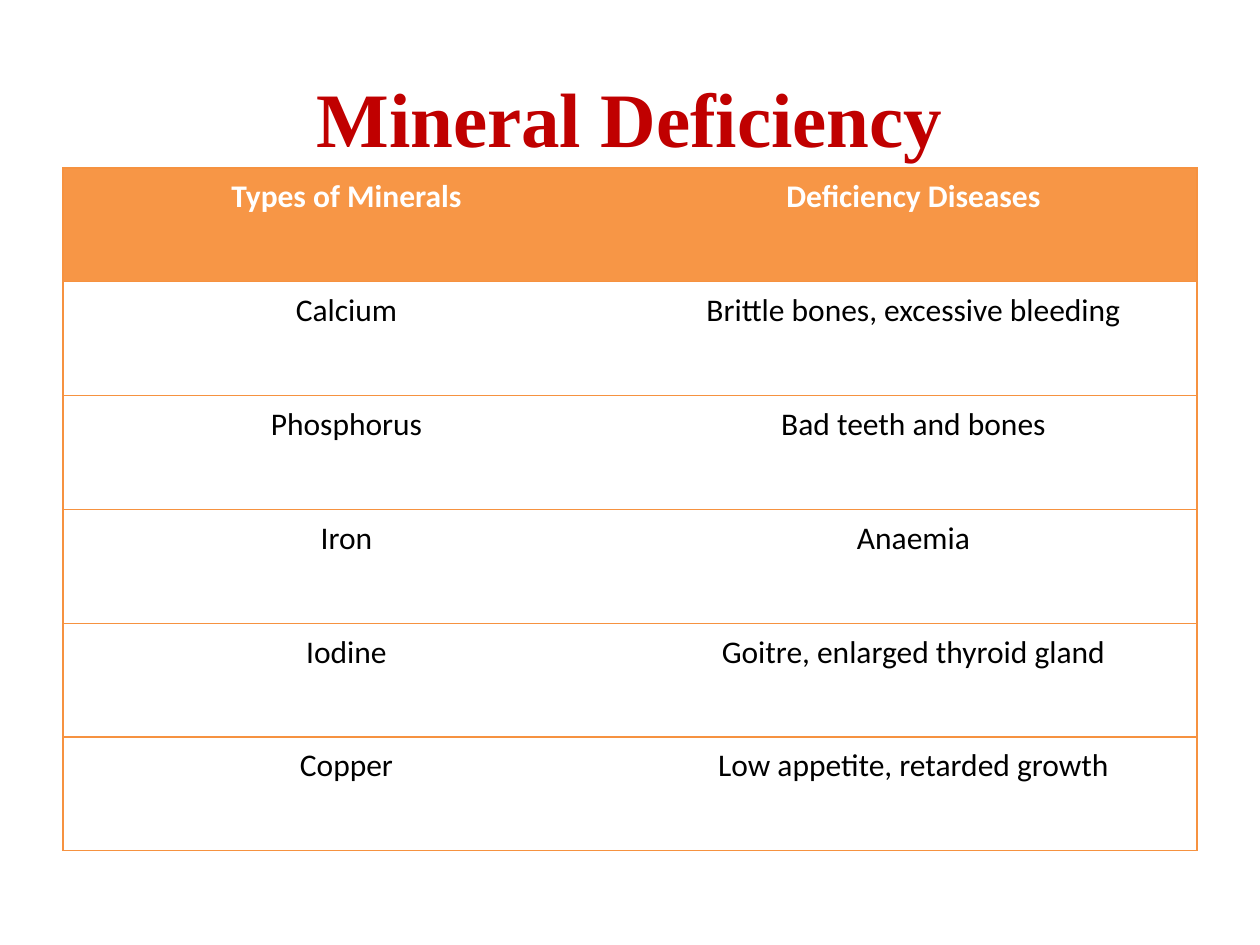
from dataclasses import dataclass

from lxml import etree
from pptx import Presentation
from pptx.dml.color import RGBColor
from pptx.enum.text import MSO_ANCHOR, PP_ALIGN
from pptx.oxml.ns import qn
from pptx.util import Emu, Pt

MIDDLE = MSO_ANCHOR.MIDDLE
CENTER = PP_ALIGN.CENTER
SCALE = 914400 / 126


@dataclass(frozen=True)
class Theme:
    red: str = "C00000"
    head: str = "F79646"
    line: str = "F69240"
    white: str = "FFFFFF"
    black: str = "000000"
    serif: str = "Times New Roman"
    sans: str = "Calibri"
    title: int = 44
    body: int = 18
    rule: float = 0.75


def px(num):
    return Emu(round(num * SCALE))


class Deck:
    def __init__(self, theme):
        self.theme = theme
        self.prs = Presentation()
        self.prs.slide_width, self.prs.slide_height = px(1260), px(945)
        self.slide = self.prs.slides.add_slide(self.prs.slide_layouts[6])

    def style(self, frame, text, face, size, color, bold):
        para = frame.paragraphs[0]
        para.text = text
        para.alignment = CENTER
        font = para.font
        font.name, font.size, font.bold = face, Pt(size), bold
        font.color.rgb = RGBColor.from_string(color)

    def title(self, text, left, top, width, height):
        look = self.theme
        box = self.slide.shapes.add_textbox(*map(px, (left, top, width, height)))
        frame = box.text_frame
        frame.word_wrap = True
        frame.vertical_anchor = MIDDLE
        self.style(frame, text, look.serif, look.title, look.red, True)

    def border(self, cell, side, shown):
        props = cell._tc.get_or_add_tcPr()
        line = etree.SubElement(props, qn(f"a:ln{side}"), w=str(Pt(self.theme.rule)))
        if shown:
            fill = etree.SubElement(line, qn("a:solidFill"))
            etree.SubElement(fill, qn("a:srgbClr"), val=self.theme.line)
        else:
            etree.SubElement(line, qn("a:noFill"))

    def cell(self, cell, text, head, edges):
        look = self.theme
        cell.margin_left = cell.margin_right = px(10)
        cell.margin_top = cell.margin_bottom = px(10)
        for side in "LRTB":
            self.border(cell, side, side in edges)
        cell.fill.solid()
        cell.fill.fore_color.rgb = RGBColor.from_string(look.head if head else look.white)
        color = look.white if head else look.black
        self.style(cell.text_frame, text, look.sans, look.body, color, head)

    def table(self, data, left, top, width, height):
        count = len(data[0])
        frame = self.slide.shapes.add_table(
            len(data), count, *map(px, (left, top, width, height)))
        grid = frame.table
        grid.horz_banding = False
        for row, texts in enumerate(data):
            for col, text in enumerate(texts):
                edges = "TB" + "L" * (col == 0) + "R" * (col == count - 1)
                self.cell(grid.cell(row, col), text, row == 0, edges)


def main():
    deck = Deck(Theme())
    deck.title("Mineral Deficiency", 63, 38, 1134, 157)
    deck.table([
        ("Types of Minerals", "Deficiency Diseases"),
        ("Calcium", "Brittle bones, excessive bleeding"),
        ("Phosphorus", "Bad teeth and bones"),
        ("Iron", "Anaemia"),
        ("Iodine", "Goitre, enlarged thyroid gland"),
        ("Copper", "Low appetite, retarded growth"),
    ], 63, 168, 1134, 683)
    deck.prs.save("out.pptx")


if __name__ == "__main__":
    main()
